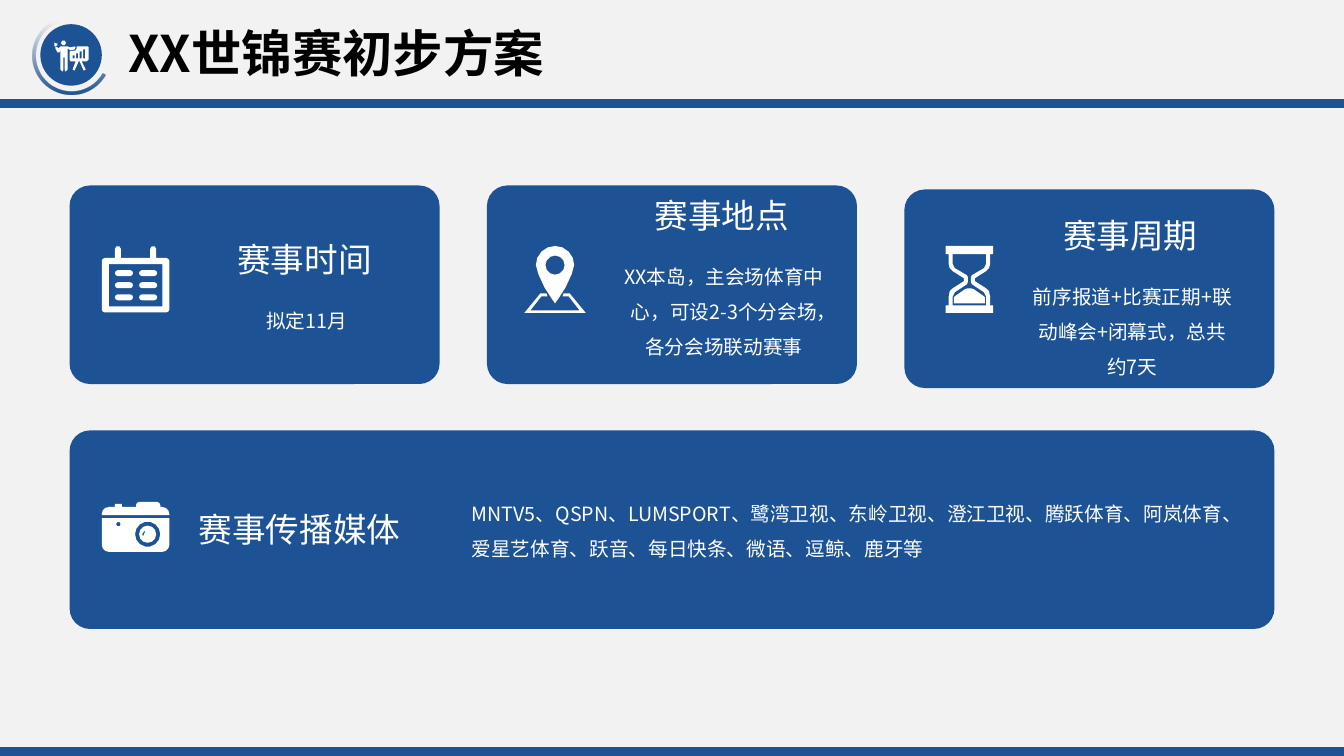
from dataclasses import dataclass
from math import cos, radians, sin, sqrt

from lxml.etree import SubElement
from pptx import Presentation
from pptx.dml.color import RGBColor
from pptx.enum.lang import MSO_LANGUAGE_ID
from pptx.enum.shapes import MSO_SHAPE
from pptx.enum.text import MSO_ANCHOR, PP_ALIGN
from pptx.oxml.ns import qn
from pptx.util import Inches, Pt


@dataclass(frozen=True)
class Theme:
    """Colours, font and type sizes of the slide."""
    blue: RGBColor = RGBColor(0x1D, 0x53, 0x94)
    white: RGBColor = RGBColor(0xFF, 0xFF, 0xFF)
    black: RGBColor = RGBColor(0, 0, 0)
    paper: RGBColor = RGBColor(0xF2, 0xF2, 0xF2)
    font: str = "Noto Sans CJK SC"
    title: int = 36
    heading: int = 24
    body: int = 14


THEME = Theme()
WIDTH, HEIGHT = 13.33, 7.5


def arc(cx, cy, radius, start, end):
    """Return points along a clockwise arc in degrees, more of them on larger arcs."""
    steps = round(sqrt(radius) * (end - start) / 90)
    angles = [radians(start + (end - start) * i / max(steps, 1)) for i in range(steps + 1)]
    return [(cx + radius * cos(a), cy + radius * sin(a)) for a in angles]


def circle(cx, cy, radius):
    """Return a closed circle."""
    return arc(cx, cy, radius, 0, 360)


def rounded(x, y, w, h, top=0, bottom=0):
    """Return a rectangle with rounded top and bottom corners."""
    right, base = x + w, y + h
    return (arc(x + top, y + top, top, 180, 270) + arc(right - top, y + top, top, 270, 360)
            + arc(right - bottom, base - bottom, bottom, 0, 90)
            + arc(x + bottom, base - bottom, bottom, 90, 180))


def mirrored(half, width):
    """Close a right half with its reflection across the width."""
    return half + [(width - x, y) for x, y in reversed(half)]


def calendar():
    """Return the calendar contours in hundredths of an inch."""
    right = ([(48, 12)] + arc(51, 3, 3, 180, 360) + [(54, 12)]
             + arc(64, 15, 3, 270, 360) + arc(64, 63, 3, 0, 90))
    days = [rounded(x, y, 18, 6, 3, 3) for x in (13, 37) for y in (24, 36, 48)]
    return [mirrored(right, 67), rounded(7, 18, 53, 42), *days]


def map_pin():
    """Return the map pin contours in hundredths of an inch."""
    drop = arc(30.5, 19, 19, 270, 360) + [(47, 28), (41, 41), (34, 52), (30.5, 57)]
    base = [(38, 50), (39, 47), (45, 47), (61, 66.5), (0, 66.5), (16, 47), (22, 47), (23, 50),
            (17, 50), (6, 64), (55, 64), (44, 50)]
    return [mirrored(drop, 61), circle(30.5, 19, 9.5), base]


def hourglass():
    """Return the hourglass contours in hundredths of an inch."""
    frame = [(47, 0), (47, 8), (44, 8), (44, 18), (43, 22), (40, 25), (29, 32), (29, 35),
             (40, 42), (43, 45), (44, 50), (44, 59), (47, 59), (47, 66.5)]
    glass = [(40, 8), (40, 18), (38, 22), (26, 29), (25, 31), (25, 36), (26, 38), (38, 46),
             (40, 50), (40, 59)]
    sand = [(25, 42), (28, 43), (38, 50), (39, 51), (39, 57)]
    return [mirrored(half, 47) for half in (frame, glass, sand)]


def camera():
    """Return the camera contours in hundredths of an inch."""
    top = ([(0, 13)] + arc(7, 12, 7, 180, 270) + [(13, 5), (13, 2), (20, 2), (20, 5), (34, 5)]
           + arc(37, 3, 3, 180, 270) + arc(55, 3, 3, 270, 360) + [(58, 5)]
           + arc(60, 12, 7, 270, 360) + [(67, 13)])
    glint = [(42, 29), (43, 29), (42, 32), (41, 34), (40, 32)]
    return [top, rounded(0, 16, 67, 33.5, 0, 7), circle(16.5, 22, 2.3), circle(45.5, 32, 12.5),
            circle(45.5, 32, 8.5), glint]


def cameraman():
    """Return the camera operator contours in hundredths of an inch."""
    person = [(6, 6), (13, 6), (16, 7), (20, 6), (21, 7), (20, 9), (16, 10), (13, 8), (13, 29),
              (11, 31), (10, 29), (10, 17), (9, 17), (9, 29), (8, 31), (6, 29), (6, 9), (5, 12),
              (3, 12), (1, 8), (1, 6), (3, 7), (4, 8)]
    tripod = [(22, 6), (33, 6), (34, 7), (34, 19), (32, 21), (27, 21), (31, 29), (29, 30),
              (25, 21), (24, 21), (20, 30), (18, 29), (21, 21), (16, 21), (15, 19), (15, 11),
              (21, 10), (22, 8)]
    bars = [rounded(18 + 3.5 * i, 15 - 2 * i, 2, 3 + 2 * i) for i in range(4)]
    flag = [(0, 2), (1, 3), (3, 3), (3, 5), (0, 6)]
    return [circle(9, 2.5, 2.5), person, tripod, *bars, flag]


def paint(s, color):
    """Give a shape a flat fill with no line or shadow."""
    s.shadow.inherit = False
    s.line.fill.background()
    s.fill.solid()
    s.fill.fore_color.rgb = color
    return s


def add_shape(shapes, kind, x, y, w, h, *adjustments):
    """Add a blue preset shape."""
    s = shapes.add_shape(kind, Inches(x), Inches(y), Inches(w), Inches(h))
    for i, value in enumerate(adjustments):
        s.adjustments[i] = value
    return paint(s, THEME.blue)


def add_icon(shapes, contours, x, y):
    """Add a white outline icon with its top left at x, y."""
    placed = [[(Inches(x + px / 100), Inches(y + py / 100)) for px, py in c] for c in contours]
    builder = shapes.build_freeform(*placed[0][0])
    builder.add_line_segments(placed[0][1:])
    for contour in placed[1:]:
        builder.move_to(*contour[0])
        builder.add_line_segments(contour[1:])
    paint(builder.convert_to_shape(), THEME.white)


def write(tf, text, size, color=THEME.white, bold=False, align=PP_ALIGN.LEFT, spacing=1.0):
    """Write one formatted paragraph into a text frame."""
    tf.word_wrap = True
    tf.vertical_anchor = MSO_ANCHOR.TOP
    p = tf.paragraphs[0]
    p.alignment, p.line_spacing = align, spacing
    r = p.add_run()
    r.text = text
    r.font.size, r.font.bold = Pt(size), bold
    r.font.color.rgb = color
    r.font.language_id = MSO_LANGUAGE_ID.SIMPLIFIED_CHINESE
    r.font.name = THEME.font
    SubElement(r.font._element, qn("a:ea"), typeface=THEME.font)


def add_text(shapes, text, x, y, w, h, **style):
    """Add a text box."""
    box = shapes.add_textbox(Inches(x), Inches(y), Inches(w), Inches(h))
    write(box.text_frame, text, **style)


def add_badge(slide, x, y):
    """Draw the round badge with its fading ring."""
    shapes = slide.shapes.add_group_shape().shapes
    add_shape(shapes, MSO_SHAPE.OVAL, x + 0.08, y + 0.08, 0.61, 0.61)
    ring = add_shape(shapes, MSO_SHAPE.BLOCK_ARC, x, y, 0.78, 0.78, 71.447, 0.452, 0.048)
    ring.rotation = 270
    ring.fill.gradient()
    ring.fill.gradient_angle = 0
    for stop, position in zip(ring.fill.gradient_stops, (0, 0.94)):
        stop.color.rgb, stop.position = THEME.blue, position
    clear = ring._element.spPr.findall(".//" + qn("a:srgbClr"))[-1]
    SubElement(clear, qn("a:alpha"), val="0")
    add_icon(shapes, cameraman(), x + 0.22, y + 0.24)


def add_header(slide):
    """Place the title, the badge and the two page bars."""
    title = slide.shapes.title
    title.left, title.top, title.width, title.height = map(Inches, (1.17, 0.17, 5.88, 0.71))
    write(title.text_frame, "XX世锦赛初步方案", THEME.title, THEME.black, bold=True)
    add_badge(slide, 0.32, 0.16)
    for y in (HEIGHT - 0.09, 0.98):
        add_shape(slide.shapes, MSO_SHAPE.FLOWCHART_PROCESS, 0, y, WIDTH, 0.09)


def add_panel(slide, x, y, w, icon, icon_x, icon_y):
    """Draw a rounded panel with its icon and return its group's shapes."""
    shapes = slide.shapes.add_group_shape().shapes
    add_shape(shapes, MSO_SHAPE.ROUNDED_RECTANGLE, x, y, w, 1.97, 0.103)
    add_icon(shapes, icon, x + icon_x, y + icon_y)
    return shapes


def add_card(slide, x, y, icon, icon_x, icon_y, center, top, heading, body, body_w, body_h):
    """Draw a card with a heading above centred details."""
    shapes = add_panel(slide, x, y, 3.67, icon, icon_x, icon_y)
    add_text(shapes, heading, x + center - 0.81, y + top, 1.62, 0.5,
             size=THEME.heading, align=PP_ALIGN.CENTER)
    add_text(shapes, body, x + center + 0.02 - body_w / 2, y + top + 0.58, body_w, body_h,
             size=THEME.body, align=PP_ALIGN.CENTER, spacing=1.5)


def add_media(slide, x, y):
    """Draw the wide media panel."""
    shapes = add_panel(slide, x, y, 11.95, camera(), 0.32, 0.71)
    add_text(shapes, "赛事传播媒体", x + 0.99, y + 0.73, 2.58, 0.5,
             size=THEME.heading, align=PP_ALIGN.CENTER)
    add_text(shapes, "MNTV5、QSPN、LUMSPORT、鹭湾卫视、东岭卫视、澄江卫视、腾跃体育、"
             "阿岚体育、爱星艺体育、跃音、每日快条、微语、逗鲸、鹿牙等",
             x + 3.89, y + 0.54, 7.69, 0.77, size=THEME.body, spacing=1.5)


def main():
    """Build and save the slide."""
    prs = Presentation()
    prs.slide_width, prs.slide_height = Inches(WIDTH), Inches(HEIGHT)
    slide = prs.slides.add_slide(prs.slide_layouts[5])
    slide.background.fill.solid()
    slide.background.fill.fore_color.rgb = THEME.paper
    add_header(slide)
    cards = [
        (1.84, calendar(), 0.32, 0.6, 2.33, 0.48, "赛事时间", "拟定11月", 1.62, 0.41),
        (1.84, map_pin(), 0.37, 0.6, 2.33, 0.04, "赛事地点",
         "XX本岛，主会场体育中心，可设2-3个分会场，各分会场联动赛事", 2.22, 1.12),
        (1.88, hourglass(), 0.41, 0.56, 2.24, 0.2, "赛事周期",
         "前序报道+比赛正期+联动峰会+闭幕式，总共约7天", 2.22, 1.12),
    ]
    for i, (y, *parts) in enumerate(cards):
        add_card(slide, 0.69 + 4.14 * i, y, *parts)
    add_media(slide, 0.69, 4.27)
    prs.save("out.pptx")


if __name__ == "__main__":
    main()
